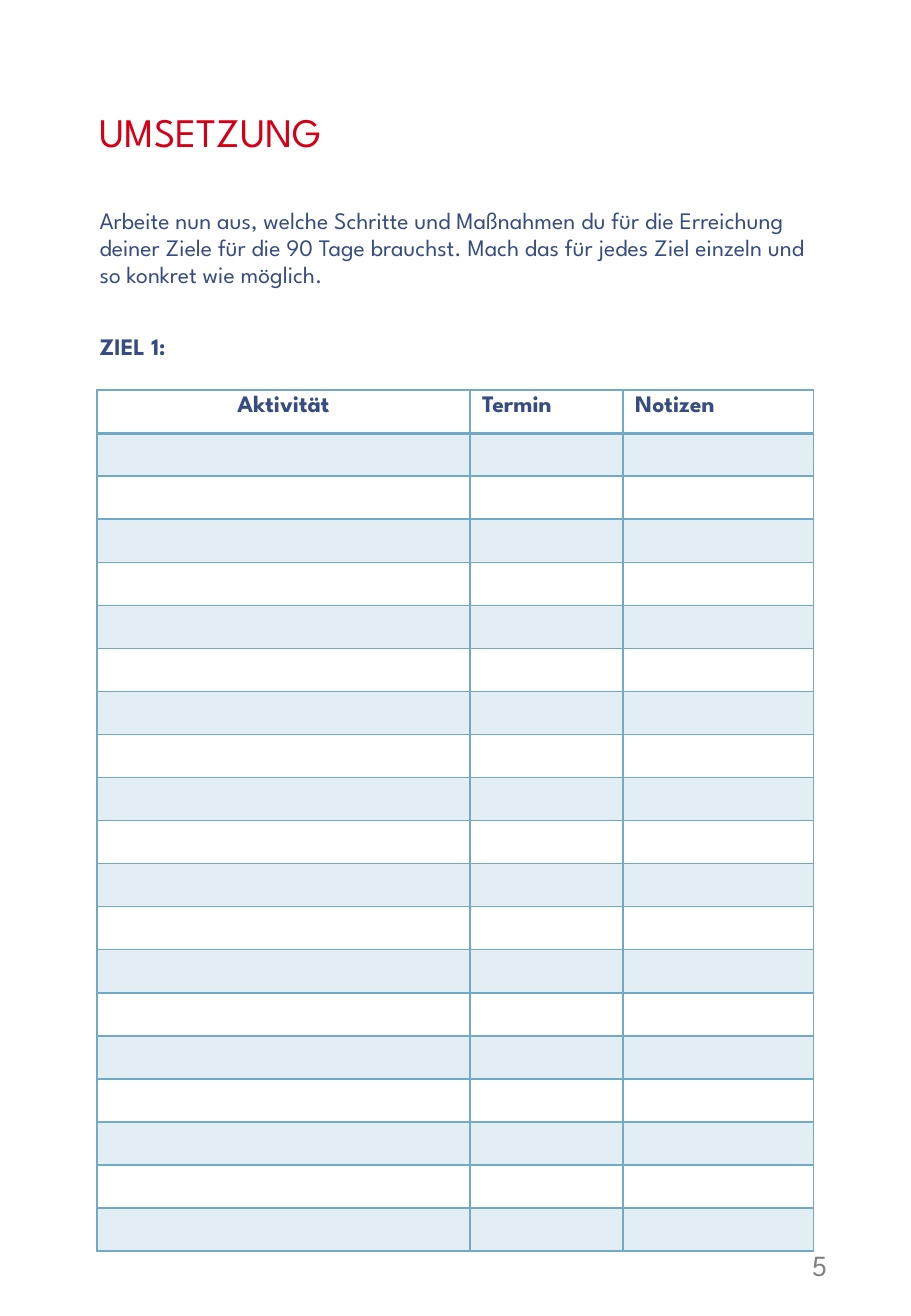
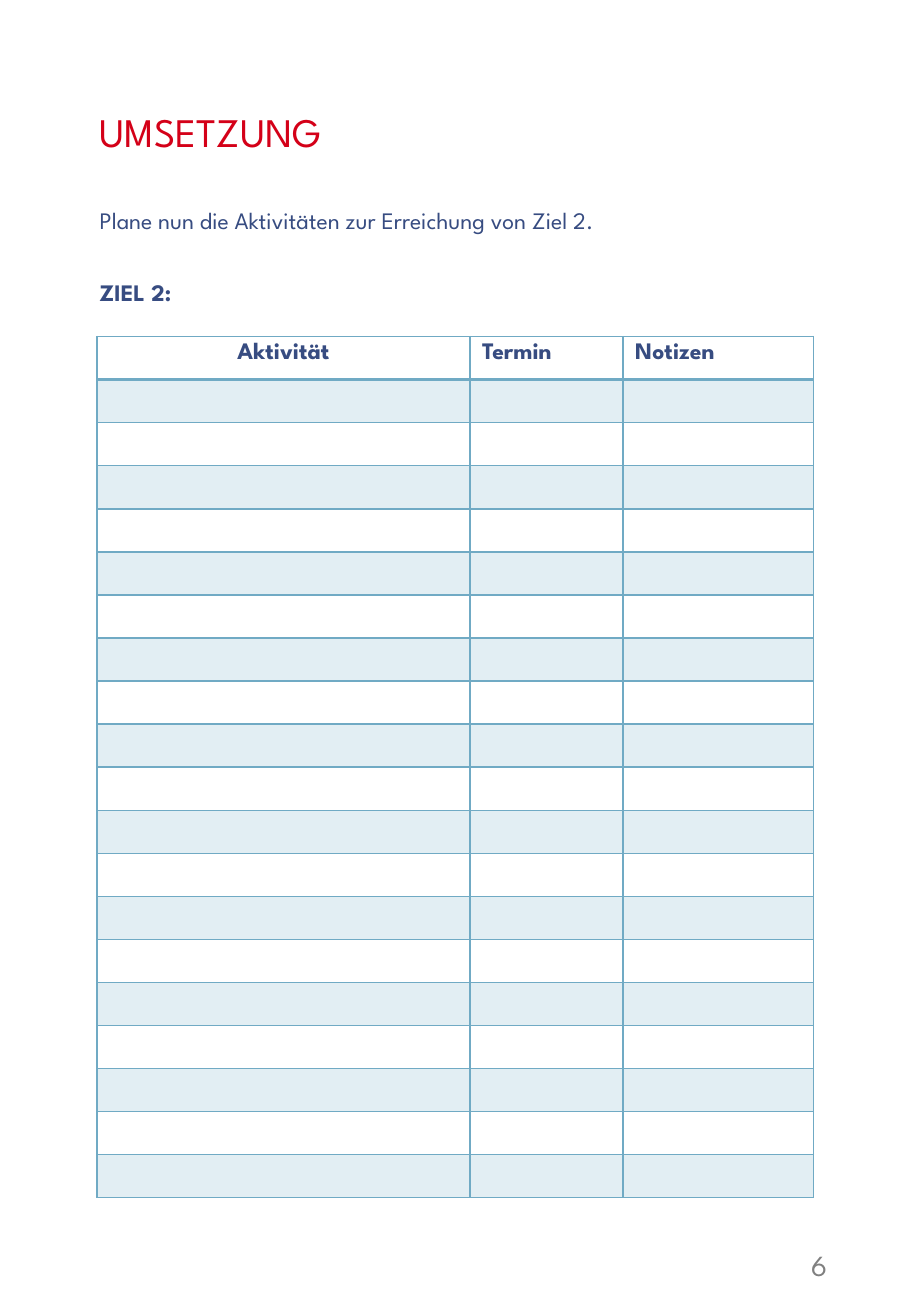
"""Build two planning pages, each with a goal and a table of activities."""
from pptx import Presentation
from pptx.dml.color import RGBColor
from pptx.enum.text import MSO_ANCHOR, PP_ALIGN
from pptx.oxml.ns import qn
from pptx.util import Inches, Pt
from lxml.etree import SubElement

RED = RGBColor(0xD4, 0x00, 0x18)
NAVY = RGBColor(0x37, 0x4C, 0x81)
TEAL = RGBColor(0x70, 0xAA, 0xC4)
GREY = RGBColor(0x80, 0x80, 0x80)
FONT = "League Spartan"
LEFT, WIDTH = 0.69, 6.25
HEADS = ("Aktivität", "Termin", "Notizen")
COLS = (3.07, 1.26, 1.57)
ROWS = 20
HIGH = 7.09
PAGES = (
    ("5", "Arbeite nun aus, welche Schritte und Maßnahmen du für die Erreichung "
     "deiner Ziele für die 90 Tage brauchst. Mach das für jedes Ziel einzeln und "
     "so konkret wie möglich.", "ZIEL 1:", 3.21),
    ("6", "Plane nun die Aktivitäten zur Erreichung von Ziel 2.", "ZIEL 2:", 2.77),
)


def add_run(para, text, size, color, bold=False):
    """Add one styled run to a paragraph."""
    run = para.add_run()
    run.text = text
    font = run.font
    font.name, font.size, font.bold = FONT, Pt(size), bold
    font.color.rgb = color


def add_box(slide, left, top, width, height, anchor):
    """Add an empty wrapping text box and return its frame."""
    box = slide.shapes.add_textbox(*map(Inches, (left, top, width, height)))
    frame = box.text_frame
    frame.word_wrap = True
    frame.vertical_anchor = anchor
    frame.margin_left = frame.margin_right = Inches(0.13)
    frame.margin_top = frame.margin_bottom = Inches(0.07)
    return frame


def add_title(slide):
    """Add the red page title."""
    frame = add_box(slide, LEFT, 0.07, WIDTH, 1.28, MSO_ANCHOR.BOTTOM)
    para = frame.paragraphs[0]
    para.line_spacing = 0.85
    add_run(para, "UMSETZUNG", 24, RED)


def add_body(slide, task, goal):
    """Add the task and, below it, the bold goal line."""
    frame = add_box(slide, LEFT, 1.64, WIDTH, 8.57, MSO_ANCHOR.TOP)
    first, second = frame.paragraphs[0], frame.add_paragraph()
    first.line_spacing = second.line_spacing = 0.95
    second.space_before = Pt(26.9)
    add_run(first, task, 14, NAVY)
    add_run(second, goal, 14, NAVY, True)


def add_number(slide, number):
    """Add the page number at the lower right."""
    frame = add_box(slide, 6.26, 10.11, 0.68, 0.51, MSO_ANCHOR.BOTTOM)
    para = frame.paragraphs[0]
    para.alignment = PP_ALIGN.RIGHT
    add_run(para, number, 17.3, GREY)


def set_lines(cell, row):
    """Draw the cell borders, with a thick rule under the header."""
    props = cell._tc.get_or_add_tcPr()
    thick = {"lnB": row == 0, "lnT": row == 1}
    for side in ("lnL", "lnR", "lnT", "lnB"):
        width = Pt(2 if thick.get(side) else 1)
        line = SubElement(props, qn(f"a:{side}"), w=str(width))
        fill = SubElement(line, qn("a:solidFill"))
        SubElement(fill, qn("a:srgbClr"), val=str(TEAL))


def set_fill(cell, row):
    """Tint every odd row and leave the others clear."""
    if row % 2 == 0:
        cell.fill.background()
        return
    cell.fill.solid()
    cell.fill.fore_color.rgb = TEAL
    color = cell._tc.tcPr.find(qn("a:solidFill")).find(qn("a:srgbClr"))
    SubElement(color, qn("a:alpha"), val="20000")


def add_grid(slide, top):
    """Add the activity table."""
    frame = slide.shapes.add_table(
        ROWS, len(COLS), Inches(0.8), Inches(top), Inches(sum(COLS)), Inches(HIGH))
    table = frame.table
    table.first_row = table.horz_banding = False
    for col, width in zip(table.columns, COLS):
        col.width = Inches(width)
    for index, row in enumerate(table.rows):
        row.height = Inches(HIGH / ROWS)
        for cell in row.cells:
            set_lines(cell, index)
            set_fill(cell, index)
            para = cell.text_frame.paragraphs[0]
            para._p.get_or_add_endParaRPr().set("sz", "1400")
    for cell, head in zip(table.rows[0].cells, HEADS):
        add_run(cell.text_frame.paragraphs[0], head, 14, NAVY, True)
    table.cell(0, 0).text_frame.paragraphs[0].alignment = PP_ALIGN.CENTER


def main():
    """Build and save the pages."""
    deck = Presentation()
    deck.slide_width, deck.slide_height = Inches(7.5), Inches(10.83)
    for number, task, goal, top in PAGES:
        slide = deck.slides.add_slide(deck.slide_layouts[6])
        add_title(slide)
        add_body(slide, task, goal)
        add_number(slide, number)
        add_grid(slide, top)
    deck.save("out.pptx")


if __name__ == "__main__":
    main()
